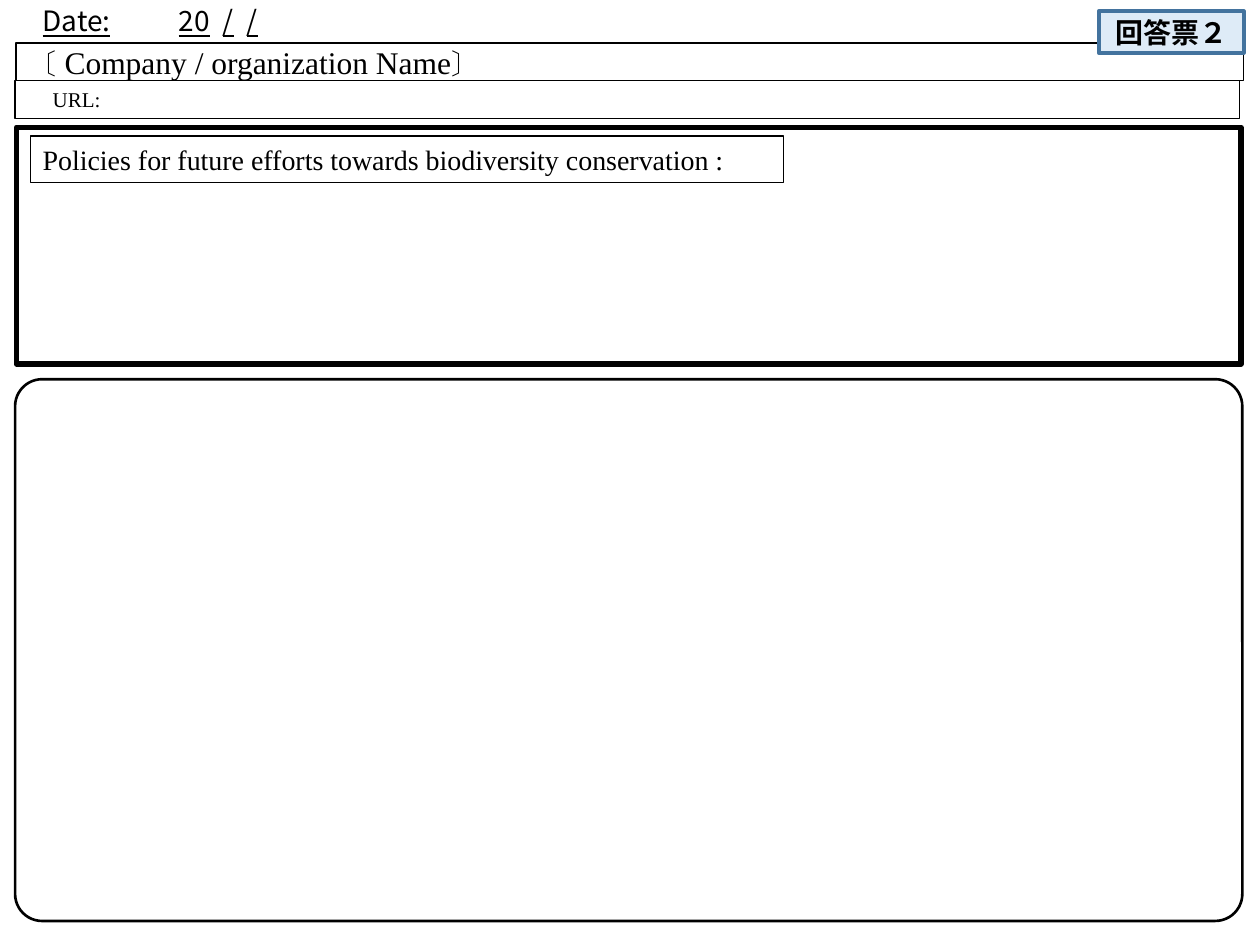
from lxml import etree
from pptx import Presentation
from pptx.dml.color import RGBColor
from pptx.enum import shapes, text
from pptx.oxml import ns
from pptx.util import Inches, Pt

BLACK = RGBColor(0x00, 0x00, 0x00)
PALE_BLUE = RGBColor(0xDE, 0xEB, 0xF7)
STEEL_BLUE = RGBColor(0x43, 0x73, 0x9E)
SERIF = "Times New Roman"
SANS = "Noto Sans CJK JP"
RECT = shapes.MSO_SHAPE.RECTANGLE
ROUNDED = shapes.MSO_SHAPE.ROUNDED_RECTANGLE
TOP = text.MSO_ANCHOR.TOP
MIDDLE = text.MSO_ANCHOR.MIDDLE


def add_frame(slide, box, weight, kind=RECT, line=BLACK, fill=None):
    """Draw an outlined box, unfilled unless a fill is given."""
    frame = slide.shapes.add_shape(kind, *map(Inches, box))
    frame.shadow.inherit = False
    frame.line.color.rgb = line
    frame.line.width = Pt(weight)
    if fill is None:
        frame.fill.background()
    else:
        frame.fill.solid()
        frame.fill.fore_color.rgb = fill
    return frame


def write(holder, runs, size, font, anchor=TOP, align=text.PP_ALIGN.LEFT, bold=False):
    """Write one paragraph of (wording, own size, underline) runs."""
    body = holder.text_frame
    body.word_wrap = True
    body.vertical_anchor = anchor
    paragraph = body.paragraphs[0]
    paragraph.alignment = align
    for wording, own_size, underline in runs:
        run = paragraph.add_run()
        run.text = wording
        if own_size:
            run.font.size = Pt(own_size)
        if underline:
            run.font.underline = True
        run.font.name = font
        etree.SubElement(run.font._element, ns.qn("a:ea"), typeface=font)
    paragraph.font.size = Pt(size)
    paragraph.font.bold = bold
    paragraph.font.color.rgb = BLACK
    for run in paragraph.runs:
        run.font.size = run.font.size or Pt(size)
        run.font.bold = bold
        run.font.color.rgb = BLACK
    return paragraph


def add_date(slide, box):
    """Place the date line, with underlined tabs as its blanks."""
    date = slide.shapes.add_textbox(*map(Inches, box))
    properties = date.text_frame.paragraphs[0]._p.get_or_add_pPr()
    stops = etree.SubElement(properties, ns.qn("a:tabLst"))
    for position in (1.08, 1.43, 1.62, 1.91):
        etree.SubElement(stops, ns.qn("a:tab"), pos=str(Inches(position)), algn="l")
    runs = [("Date:", None, True), (" ", None, False), ("\t20\t/\t/", None, True),
            (" ", None, False), ("\t", None, True)]
    write(date, runs, 16, SANS)


def add_organization(slide, box):
    """Place the name row and the URL row beneath it."""
    left, top, width, height = box
    row = height / 2
    name = add_frame(slide, (left + 0.01, top, width + 0.02, row), 1)
    write(name, [("〔", 16, False), (" Company / organization Name", 18, False),
                 ("〕", 16, False)], 16, SERIF, MIDDLE)
    url = add_frame(slide, (left, top + row, width, row), 0.75)
    paragraph = write(url, [("URL:", None, False)], 12, SERIF)
    paragraph._p.get_or_add_pPr().set("marL", str(Inches(0.2)))


def add_policies(slide, box):
    """Place the heavy policy frame and its heading."""
    left, top, _, _ = box
    add_frame(slide, box, 3)
    heading = add_frame(slide, (left + 0.11, top + 0.07, 5.98, 0.37), 0.75)
    write(heading, [("Policies for future efforts towards biodiversity conservation :",
                     None, False)], 16, SERIF)


def add_answer_space(slide, box):
    """Place the rounded blank area."""
    area = add_frame(slide, box, 1.5, ROUNDED)
    area.adjustments[0] = 0.05


def add_form_label(slide, box):
    """Place the blue form number label."""
    label = add_frame(slide, box, 2.25, line=STEEL_BLUE, fill=PALE_BLUE)
    write(label, [("回答票２", None, False)], 16, SANS, MIDDLE,
          text.PP_ALIGN.CENTER, True)


def main():
    """Build the answer form."""
    deck = Presentation()
    deck.slide_width, deck.slide_height = Inches(10), Inches(7.5)
    slide = deck.slides.add_slide(deck.slide_layouts[6])
    add_organization(slide, (0.12, 0.34, 9.72, 0.6))
    add_answer_space(slide, (0.12, 3.01, 9.74, 4.3))
    add_policies(slide, (0.13, 1.01, 9.72, 1.88))
    add_date(slide, (0.24, -0.02, 4.52, 0.37))
    add_form_label(slide, (8.72, 0.09, 1.15, 0.33))
    deck.save("out.pptx")


if __name__ == "__main__":
    main()
